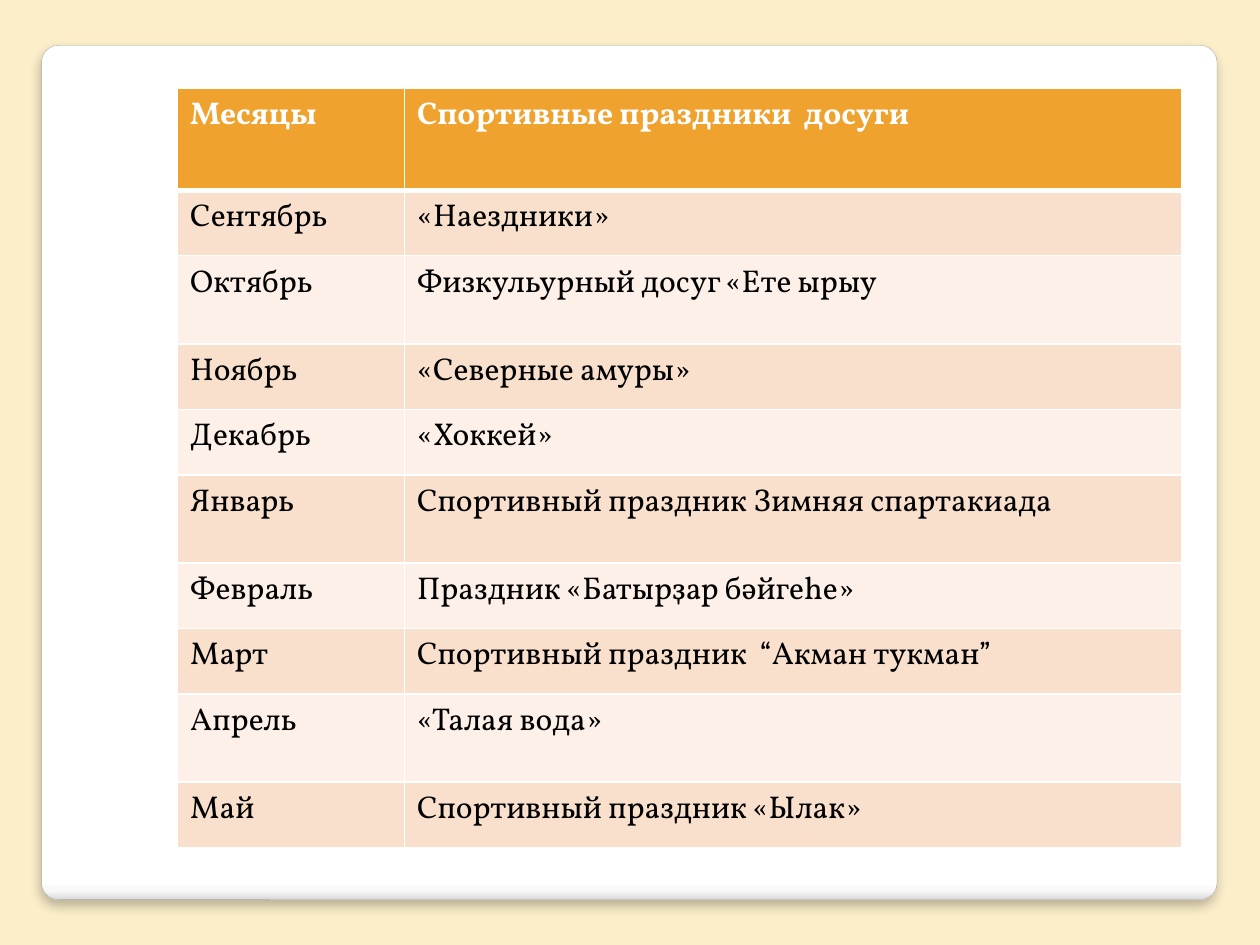
import pptx
import pptx.dml.color
import pptx.enum.shapes
import pptx.oxml
import pptx.oxml.ns
import pptx.util

Inches = pptx.util.Inches
Pt = pptx.util.Pt
RGBColor = pptx.dml.color.RGBColor

BACKGROUND = RGBColor(0xFB, 0xEE, 0xC9)
PANEL_LINE = RGBColor(0xA4, 0xA4, 0xA4)
PANEL_EDGE = RGBColor(0xF7, 0xF7, 0xF7)
PANEL_BOTTOM = RGBColor(0xDA, 0xDA, 0xDA)
WHITE = RGBColor(0xFF, 0xFF, 0xFF)
BLACK = RGBColor(0x00, 0x00, 0x00)
HEADER = RGBColor(0xF0, 0xA2, 0x2E)
BANDS = (RGBColor(0xF9, 0xE0, 0xCD), RGBColor(0xFC, 0xF0, 0xE8))
FONT = "Vollkorn"

HEADER_HEIGHT = 0.81
SHORT_ROW = 0.52
TALL_ROW = 0.7
COLUMN_WIDTHS = (1.8, 6.17)
ROWS = (
    ("Месяцы", "Спортивные праздники  досуги", HEADER_HEIGHT),
    ("Сентябрь", "«Наездники»", SHORT_ROW),
    ("Октябрь", "Физкульурный досуг «Ете ырыу", TALL_ROW),
    ("Ноябрь", "«Северные амуры»", SHORT_ROW),
    ("Декабрь", "«Хоккей»", SHORT_ROW),
    ("Январь", "Спортивный праздник Зимняя спартакиада", TALL_ROW),
    ("Февраль", "Праздник «Батырҙар бәйгеһе»", SHORT_ROW),
    ("Март", "Спортивный праздник  “Акман тукман”", SHORT_ROW),
    ("Апрель", "«Талая вода»", TALL_ROW),
    ("Май", "Спортивный праздник «Ылак»", SHORT_ROW),
)


def drawing_element(markup):
    tag, rest = markup.split(">", 1)
    namespace = pptx.oxml.ns.nsdecls("a")
    return pptx.oxml.parse_xml(f"{tag} {namespace}>{rest}")


def add_panel(slide):
    panel = slide.shapes.add_shape(
        pptx.enum.shapes.MSO_SHAPE.ROUNDED_RECTANGLE,
        Inches(0.33), Inches(0.36), Inches(9.33), Inches(6.78))
    panel.adjustments[0] = 0.02
    panel.line.color.rgb = PANEL_LINE
    panel.line.width = Pt(0.16)
    stops = ((0, WHITE), (98, WHITE), (99, PANEL_EDGE), (100, PANEL_BOTTOM))
    stop_markup = "".join(
        f'<a:gs pos="{position * 1000}"><a:srgbClr val="{color}"/></a:gs>'
        for position, color in stops)
    properties = panel.element.spPr
    properties.insert(2, drawing_element(
        f'<a:gradFill rotWithShape="1"><a:gsLst>{stop_markup}</a:gsLst>'
        '<a:lin ang="5400000" scaled="0"/></a:gradFill>'))
    properties.append(drawing_element(
        f'<a:effectLst><a:outerShdw blurRad="{Pt(6)}" dist="{Pt(4)}" dir="5400000" '
        f'algn="t" rotWithShape="0"><a:srgbClr val="{BLACK}"><a:alpha val="25000"/>'
        '</a:srgbClr></a:outerShdw></a:effectLst>'))


def set_borders(cell, top, bottom):
    properties = cell._tc.get_or_add_tcPr()
    widths = (("L", 1), ("R", 1), ("T", top), ("B", bottom))
    for position, (side, width) in enumerate(widths):
        properties.insert(position, drawing_element(
            f'<a:ln{side} w="{Pt(width)}"><a:solidFill><a:srgbClr val="{WHITE}"/>'
            f'</a:solidFill></a:ln{side}>'))


def format_cell(cell, text, row_index):
    is_header = row_index == 0
    cell.text = text
    cell.fill.solid()
    cell.fill.fore_color.rgb = HEADER if is_header else BANDS[(row_index - 1) % 2]
    font = cell.text_frame.paragraphs[0].font
    font.name = FONT
    font.size = Pt(18)
    font.bold = is_header
    font.color.rgb = WHITE if is_header else BLACK
    set_borders(cell, top=3 if row_index == 1 else 1, bottom=3 if is_header else 1)


def add_schedule(slide):
    height = sum(row[-1] for row in ROWS)
    table = slide.shapes.add_table(
        len(ROWS), len(COLUMN_WIDTHS), Inches(1.41), Inches(0.7),
        Inches(sum(COLUMN_WIDTHS)), Inches(height)).table
    for column, width in zip(table.columns, COLUMN_WIDTHS):
        column.width = Inches(width)
    for row_index, (month, event, row_height) in enumerate(ROWS):
        table.rows[row_index].height = Inches(row_height)
        for column_index, text in enumerate((month, event)):
            format_cell(table.cell(row_index, column_index), text, row_index)


def main():
    presentation = pptx.Presentation()
    presentation.slide_width = Inches(10)
    presentation.slide_height = Inches(7.5)
    slide = presentation.slides.add_slide(presentation.slide_layouts[6])
    slide.background.fill.solid()
    slide.background.fill.fore_color.rgb = BACKGROUND
    add_panel(slide)
    add_schedule(slide)
    presentation.save("out.pptx")


if __name__ == "__main__":
    main()
